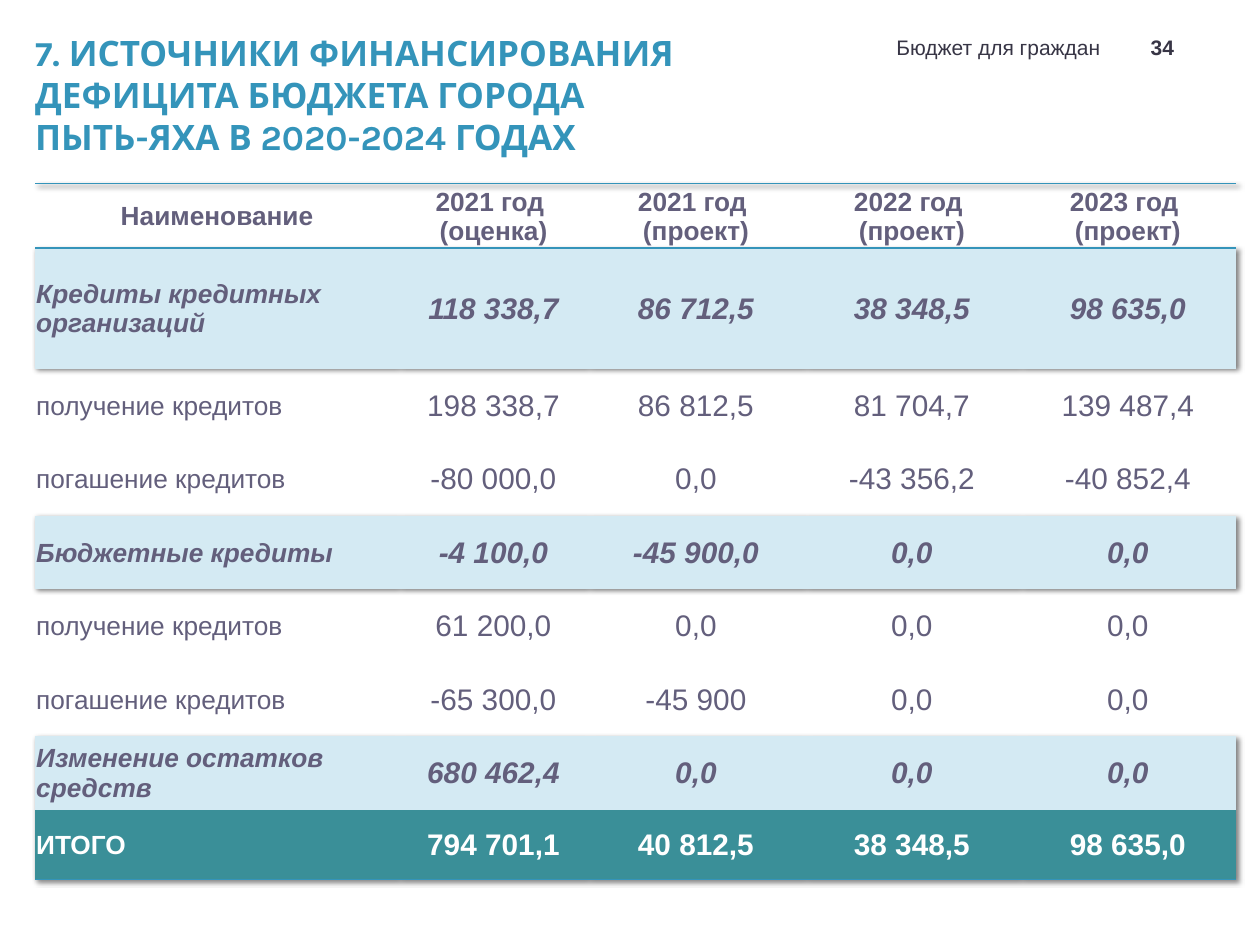
from lxml import etree
from pptx import Presentation
from pptx.dml.color import RGBColor
from pptx.enum.text import MSO_ANCHOR as Anchor, MSO_AUTO_SIZE as AutoSize, PP_ALIGN as Align
from pptx.oxml import parse_xml
from pptx.oxml.ns import nsdecls, qn
from pptx.util import Pt

BLUE = RGBColor(0x34, 0x94, 0xBA)
INK = RGBColor(0x37, 0x35, 0x45)
GREY = RGBColor(0x63, 0x5F, 0x7C)
PALE = RGBColor(0xD4, 0xEA, 0xF3)
TEAL = RGBColor(0x3A, 0x8F, 0x98)
WHITE = RGBColor(0xFF, 0xFF, 0xFF)

PLAIN_TABLE = "{2D5ABB26-0587-4C30-8999-92F81FD0307C}"
COLUMNS = [208, 108] + [123.4] * 3
ROWS = [36, 69] + [42] * 6 + [40]
HEADER = ["Наименование", "2021 год \n(оценка)", "2021 год \n(проект)",
          "2022 год \n(проект)", "2023 год \n(проект)"]
GROUPS = [
    ["Кредиты кредитных организаций", "118 338,7", "86 712,5", "38 348,5", "98 635,0"],
    ["Бюджетные кредиты", "-4 100,0", "-45 900,0", "0,0", "0,0"],
    ["Изменение остатков средств", "680 462,4", "0,0", "0,0", "0,0"],
]
DETAILS = [
    [["получение кредитов", "198 338,7", "86 812,5", "81 704,7", "139 487,4"],
     ["погашение кредитов", "-80 000,0", "0,0", "-43 356,2", "-40 852,4"]],
    [["получение кредитов", "61 200,0", "0,0", "0,0", "0,0"],
     ["погашение кредитов", "-65 300,0", "-45 900", "0,0", "0,0"]],
    [],
]
TOTAL = ["ИТОГО", "794 701,1", "40 812,5", "38 348,5", "98 635,0"]


class Report:
    """Holds the style and the current page."""
    font = "Arial"
    title_font = "Karla"
    label_size, value_size = 15, 17

    def __init__(self, deck):
        self.page = deck.slides.add_slide(deck.slide_layouts[5])

    def format(self, frame, size, color, align, bold=False, italic=False, name=None):
        for para in frame.paragraphs:
            para.alignment = align
            for span in para.runs:
                font = span.font
                font.name, font.size = name or self.font, Pt(size)
                font.bold, font.italic = bold, italic
                font.color.rgb = color

    def title(self, text, left, top, width, height):
        box = self.page.shapes.title
        box.left, box.top, box.width, box.height = Pt(left), Pt(top), Pt(width), Pt(height)
        frame = box.text_frame
        frame.text = text
        frame.word_wrap, frame.auto_size = True, AutoSize.NONE
        frame.vertical_anchor = Anchor.TOP
        frame.margin_left = frame.margin_right = 0
        frame.paragraphs[0].line_spacing = Pt(24)
        self.format(frame, 20, BLUE, Align.LEFT, bold=True, name=self.title_font)

    def label(self, text, left, top, width, height, align, bold=False):
        box = self.page.shapes.add_textbox(Pt(left), Pt(top), Pt(width), Pt(height))
        frame = box.text_frame
        frame.text = text
        frame.word_wrap, frame.vertical_anchor = True, Anchor.BOTTOM
        self.format(frame, 12, INK, align, bold)

    def table(self, left, top, columns, rows):
        shape = self.page.shapes.add_table(len(rows), len(columns), Pt(left), Pt(top),
                                           Pt(sum(columns)), Pt(sum(rows)))
        table = shape.table
        table.first_row = table.horz_banding = False
        for column, width in zip(table.columns, columns):
            column.width = Pt(width)
        for row, height in zip(table.rows, rows):
            row.height = Pt(height)
        # Plain style with a soft shadow
        properties = table._tbl.tblPr
        properties.find(qn("a:tableStyleId")).text = PLAIN_TABLE
        properties.insert(0, parse_xml(
            f'<a:effectLst {nsdecls("a")}><a:outerShdw blurRad="{Pt(3)}" dist="{Pt(2)}" '
            'dir="2700000" algn="tl" rotWithShape="0"><a:srgbClr val="000000">'
            '<a:alpha val="50000"/></a:srgbClr></a:outerShdw></a:effectLst>'))
        return table

    def row(self, cells, texts, fill=None, color=GREY, bold=False, italic=False,
            header=False, borders=()):
        for index, (cell, text) in enumerate(zip(cells, texts)):
            cell.text = text
            cell.vertical_anchor = Anchor.MIDDLE
            cell.margin_left = cell.margin_right = cell.margin_top = Pt(0.7)
            cell.margin_bottom = 0
            size = self.label_size if header or index == 0 else self.value_size
            align = Align.CENTER if header or index else Align.LEFT
            self.format(cell.text_frame, size, color, align, bold, italic)
            self.borders(cell, borders)
            if fill is None:
                cell.fill.background()
            else:
                cell.fill.solid()
                cell.fill.fore_color.rgb = fill

    def borders(self, cell, sides):
        for side in sides:
            line = etree.SubElement(cell._tc.get_or_add_tcPr(), qn(f"a:{side}"), w=str(Pt(1)))
            solid = etree.SubElement(line, qn("a:solidFill"))
            etree.SubElement(solid, qn("a:srgbClr"), val=str(BLUE))


def main():
    deck = Presentation()
    deck.slide_width, deck.slide_height = Pt(720), Pt(540)
    report = Report(deck)

    # Heading and page marks
    report.title("7. ИСТОЧНИКИ ФИНАНСИРОВАНИЯ ДЕФИЦИТА БЮДЖЕТА ГОРОДА \v"
                 "ПЫТЬ-ЯХА В 2020-2024 ГОДАХ", 20, 14.4, 397, 57)
    report.label("Бюджет для граждан", 462, 13.7, 174, 23.8, Align.RIGHT)
    report.label("34", 644.4, 13.7, 39.6, 23.8, Align.CENTER, bold=True)

    # Deficit financing table
    table = report.table(20, 105, COLUMNS, ROWS)
    rows = iter(table.rows)
    report.row(next(rows).cells, HEADER, bold=True, header=True, borders=("lnT", "lnB"))
    for group, details in zip(GROUPS, DETAILS):
        report.row(next(rows).cells, group, fill=PALE, bold=True, italic=True)
        for detail in details:
            report.row(next(rows).cells, detail)
    report.row(next(rows).cells, TOTAL, fill=TEAL, color=WHITE, bold=True, borders=("lnB",))

    deck.save("out.pptx")


if __name__ == "__main__":
    main()
